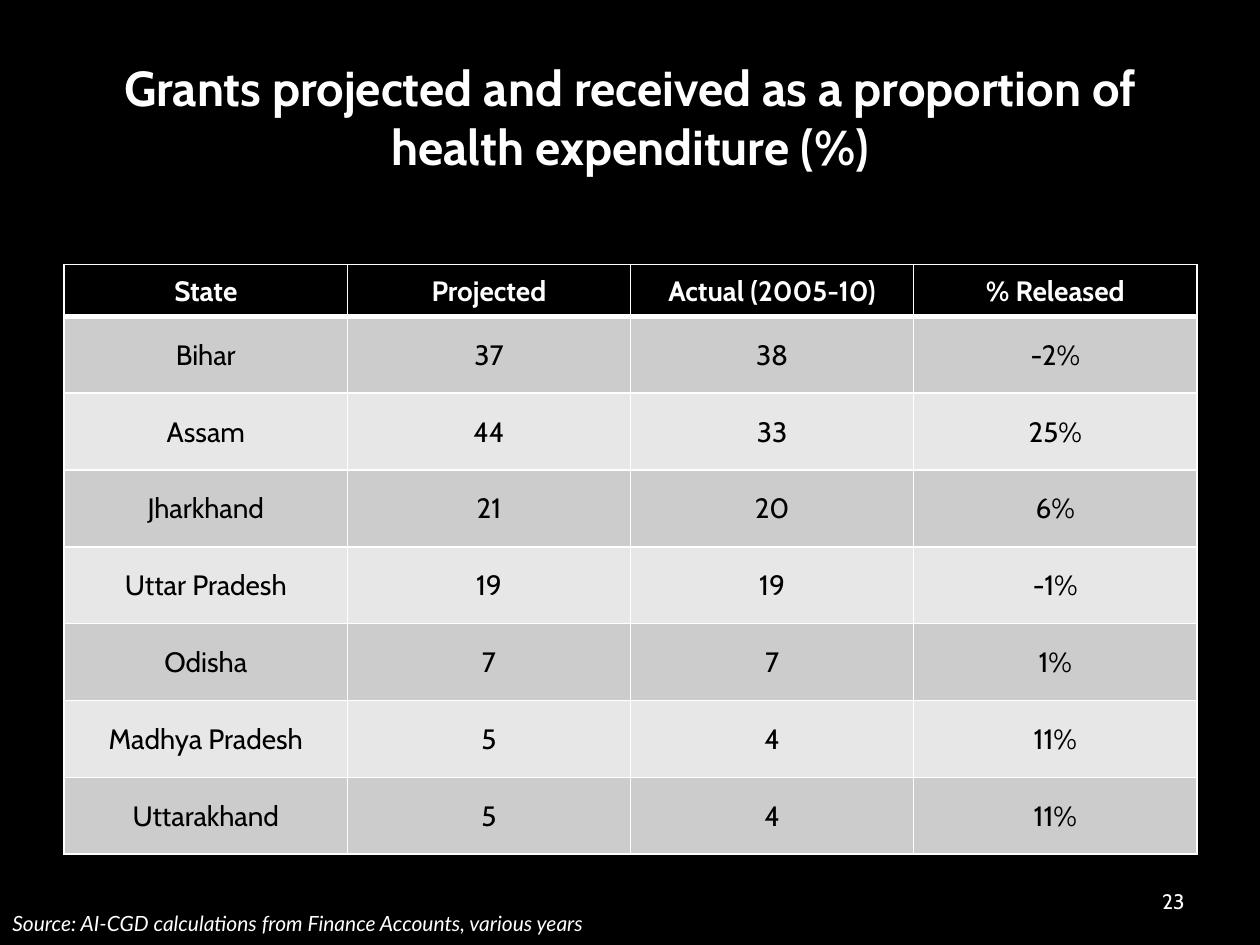
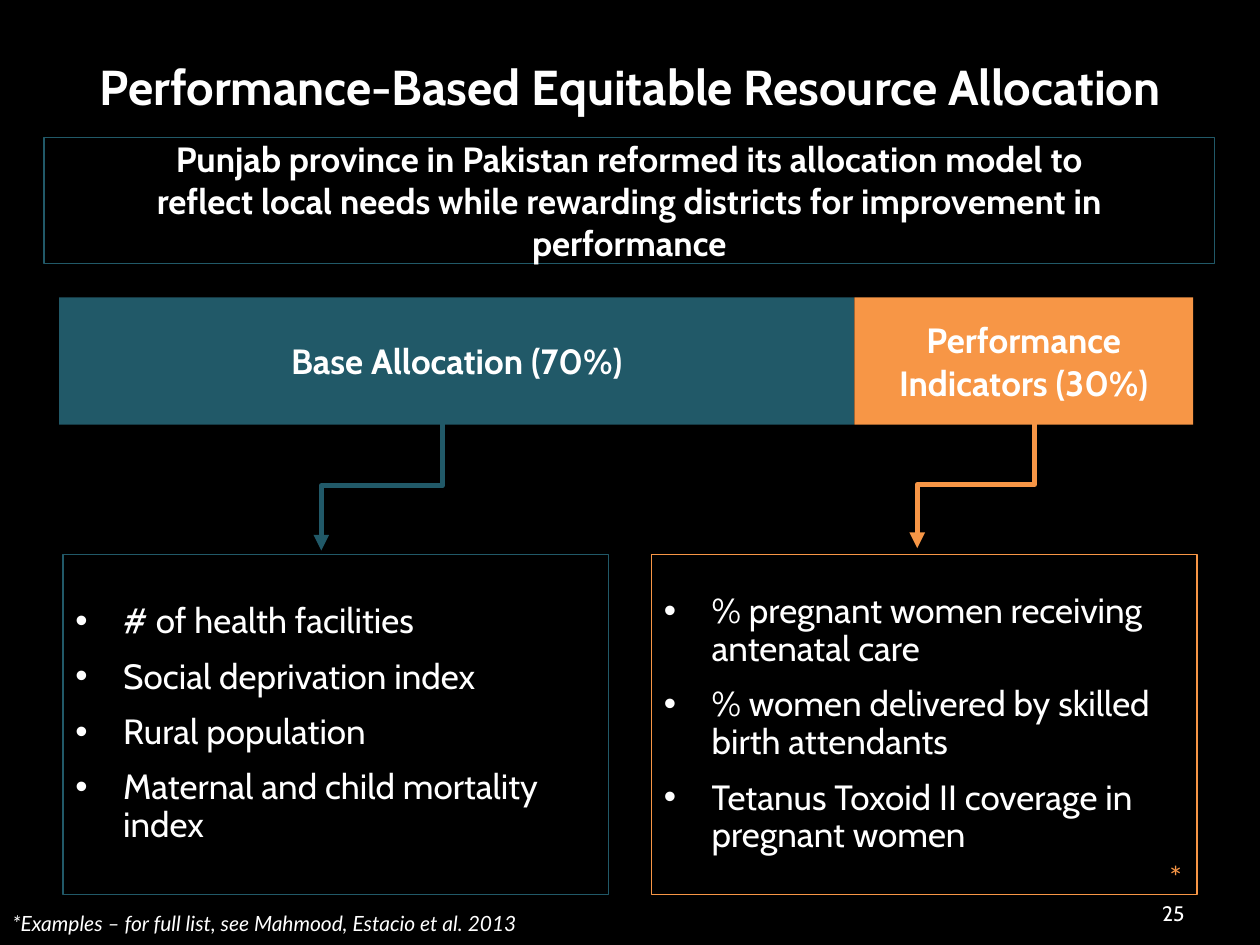
from dataclasses import dataclass

from lxml import etree
from pptx import Presentation
from pptx.dml.color import RGBColor
from pptx.enum import shapes, text
from pptx.oxml import ns
from pptx.util import Inches, Pt

BLACK = RGBColor(0x00, 0x00, 0x00)
WHITE = RGBColor(0xFF, 0xFF, 0xFF)
TEAL = RGBColor(0x21, 0x59, 0x68)
ORANGE = RGBColor(0xF7, 0x96, 0x46)
BANDS = (RGBColor(0xCC, 0xCC, 0xCC), RGBColor(0xE7, 0xE7, 0xE7))

LEFT = text.PP_ALIGN.LEFT
CENTER = text.PP_ALIGN.CENTER
RIGHT = text.PP_ALIGN.RIGHT
MIDDLE = text.MSO_ANCHOR.MIDDLE
TOP = text.MSO_ANCHOR.TOP

GRANTS = (
    ("State", "Projected", "Actual (2005-10)", "% Released"),
    ("Bihar", "37", "38", "-2%"),
    ("Assam", "44", "33", "25%"),
    ("Jharkhand", "21", "20", "6%"),
    ("Uttar Pradesh", "19", "19", "-1%"),
    ("Odisha", "7", "7", "1%"),
    ("Madhya Pradesh", "5", "4", "11%"),
    ("Uttarakhand", "5", "4", "11%"),
)


@dataclass(frozen=True)
class Box:
    left: float
    top: float
    width: float
    height: float

    def place(self) -> tuple:
        return tuple(Inches(n) for n in (self.left, self.top, self.width, self.height))


@dataclass(frozen=True)
class Share:
    """One part of the allocation: its bar, its arrow and its list of items."""
    label: str
    color: RGBColor
    bar: Box
    start: tuple
    end: tuple
    panel: Box
    items: tuple


SHARES = (
    Share("Base Allocation (70%)", TEAL, Box(0.47, 2.36, 6.31, 1.01),
          (3.51, 3.34), (2.55, 4.37), Box(0.5, 4.4, 4.33, 2.7),
          ("# of health facilities", "Social deprivation index",
           "Rural population", "Maternal and child mortality index")),
    Share("Performance Indicators (30%)", ORANGE, Box(6.78, 2.36, 2.69, 1.01),
          (8.21, 3.34), (7.28, 4.35), Box(5.17, 4.4, 4.33, 2.7),
          ("% pregnant women receiving antenatal care",
           "% women delivered by skilled birth attendants",
           "Tetanus Toxoid II coverage in pregnant women")),
)


def add_xml(parent, tag: str, **attrs):
    return etree.SubElement(parent, ns.qn(tag), attrs)


def add_bullet(par) -> None:
    props = par._p.get_or_add_pPr()
    props.set("marL", str(Inches(0.38)))
    props.set("indent", str(-Inches(0.38)))
    par.line_spacing = 0.9
    par.space_after = Pt(10)
    add_xml(props, "a:buFont", typeface="Arial")
    add_xml(props, "a:buChar", char="•")


def write(frame, *lines: str, size: float = 20, font: str = "Cabin",
          color: RGBColor = WHITE, bold: bool = False, italic: bool = False,
          align=CENTER, anchor=MIDDLE, bullets: bool = False,
          wrap: bool = True) -> None:
    frame.word_wrap = wrap
    frame.vertical_anchor = anchor
    for i, line in enumerate(lines):
        par = frame.add_paragraph() if i else frame.paragraphs[0]
        par.text = line
        par.alignment = align
        if bullets:
            add_bullet(par)
        for run in par.runs:
            face = run.font
            face.name, face.size = font, Pt(size)
            face.bold, face.italic = bold, italic
            face.color.rgb = color


def add_text(slide, box: Box, *lines: str, **style) -> None:
    write(slide.shapes.add_textbox(*box.place()).text_frame, *lines, **style)


def add_rect(slide, box: Box, *lines: str, fill: RGBColor = BLACK,
             edge: RGBColor | None = None, **style) -> None:
    rect = slide.shapes.add_shape(shapes.MSO_SHAPE.RECTANGLE, *box.place())
    rect.shadow.inherit = False
    rect.fill.solid()
    rect.fill.fore_color.rgb = fill
    if edge is None:
        rect.line.fill.background()
    else:
        rect.line.color.rgb = edge
        rect.line.width = Pt(0.75)
    write(rect.text_frame, *lines, **style)


def add_arrow(slide, start: tuple, end: tuple, color: RGBColor) -> None:
    """Draw an elbow that leaves downward, by turning a sideways one 90 degrees."""
    mid_x, mid_y = (start[0] + end[0]) / 2, (start[1] + end[1]) / 2
    half_w, half_h = (end[1] - start[1]) / 2, (start[0] - end[0]) / 2
    arrow = slide.shapes.add_connector(
        shapes.MSO_CONNECTOR.ELBOW,
        Inches(mid_x - half_w), Inches(mid_y - half_h),
        Inches(mid_x + half_w), Inches(mid_y + half_h))
    arrow.line.color.rgb = color
    arrow.line.width = Pt(3)
    props = arrow._element.spPr
    props.find(ns.qn("a:xfrm")).set("rot", str(90 * 60000))
    add_xml(arrow.line._get_or_add_ln(), "a:tailEnd", type="triangle")
    add_xml(props, "a:effectLst")


def set_edge(cell, side: str, width: float) -> None:
    line = add_xml(cell._tc.get_or_add_tcPr(), f"a:ln{side}", w=str(Pt(width)))
    add_xml(add_xml(line, "a:solidFill"), "a:srgbClr", val=str(WHITE))


def add_grid(slide, box: Box, rows: tuple, head: float, body: float) -> None:
    grid = slide.shapes.add_table(len(rows), len(rows[0]), *box.place()).table
    for col in grid.columns:
        col.width = Inches(box.width / len(rows[0]))
    for r, row in enumerate(rows):
        grid.rows[r].height = Inches(body if r else head)
        for c, value in enumerate(row):
            cell = grid.cell(r, c)
            cell.margin_left = cell.margin_right = cell.margin_top = Inches(0.01)
            cell.margin_bottom = 0
            for side in "LRTB":
                thick = (r, side) in ((0, "B"), (1, "T"))
                set_edge(cell, side, 3 if thick else 1)
            cell.fill.solid()
            cell.fill.fore_color.rgb = BANDS[(r - 1) % 2] if r else BLACK
            write(cell.text_frame, value, size=16, bold=r == 0,
                  color=BLACK if r else WHITE)
            cell.vertical_anchor = MIDDLE


def add_page(deck, title: str, height: float, note: str,
             number: str, foot: float):
    """Add a black slide with its title, source note and page number."""
    slide = deck.slides.add_slide(deck.slide_layouts[6])
    slide.background.fill.solid()
    slide.background.fill.fore_color.rgb = BLACK
    add_text(slide, Box(0.5, 0.3, 9, height), title, size=28, bold=True)
    add_text(slide, Box(0, 7.16, 6, 0.34), note, size=12, font="Lato",
             italic=True, align=LEFT)
    add_text(slide, Box(7.17, foot, 2.33, 0.4), number, size=12, align=RIGHT)
    return slide


def add_grants(deck) -> None:
    slide = add_page(
        deck, "Grants projected and received as a proportion of health expenditure (%)",
        1.25, "Source: AI-CGD calculations from Finance Accounts, various years",
        "23", 6.95)
    add_grid(slide, Box(0.51, 2.1, 8.99, 4.65), GRANTS, head=0.41, body=0.61)


def add_model(deck) -> None:
    slide = add_page(
        deck, "Performance-Based Equitable Resource Allocation", 0.77,
        "*Examples – for full list, see Mahmood, Estacio et al. 2013", "25", 7.05)
    add_rect(slide, Box(0.35, 1.09, 9.29, 1),
             "Punjab province in Pakistan reformed its allocation model to\v"
             "reflect local needs while rewarding districts for improvement "
             "in performance", edge=TEAL, bold=True)
    for share in SHARES:
        add_rect(slide, share.panel, *share.items, edge=share.color,
                 align=LEFT, bullets=True)
        add_arrow(slide, share.start, share.end, share.color)
        add_rect(slide, share.bar, share.label, fill=share.color, bold=True)
    add_text(slide, Box(9.17, 6.75, 0.33, 0.4), "*", size=18, font="Calibri",
             color=ORANGE, align=LEFT, anchor=TOP, wrap=False)


def main() -> None:
    deck = Presentation()
    deck.slide_width, deck.slide_height = Inches(10), Inches(7.5)
    add_grants(deck)
    add_model(deck)
    deck.save("out.pptx")


if __name__ == "__main__":
    main()
